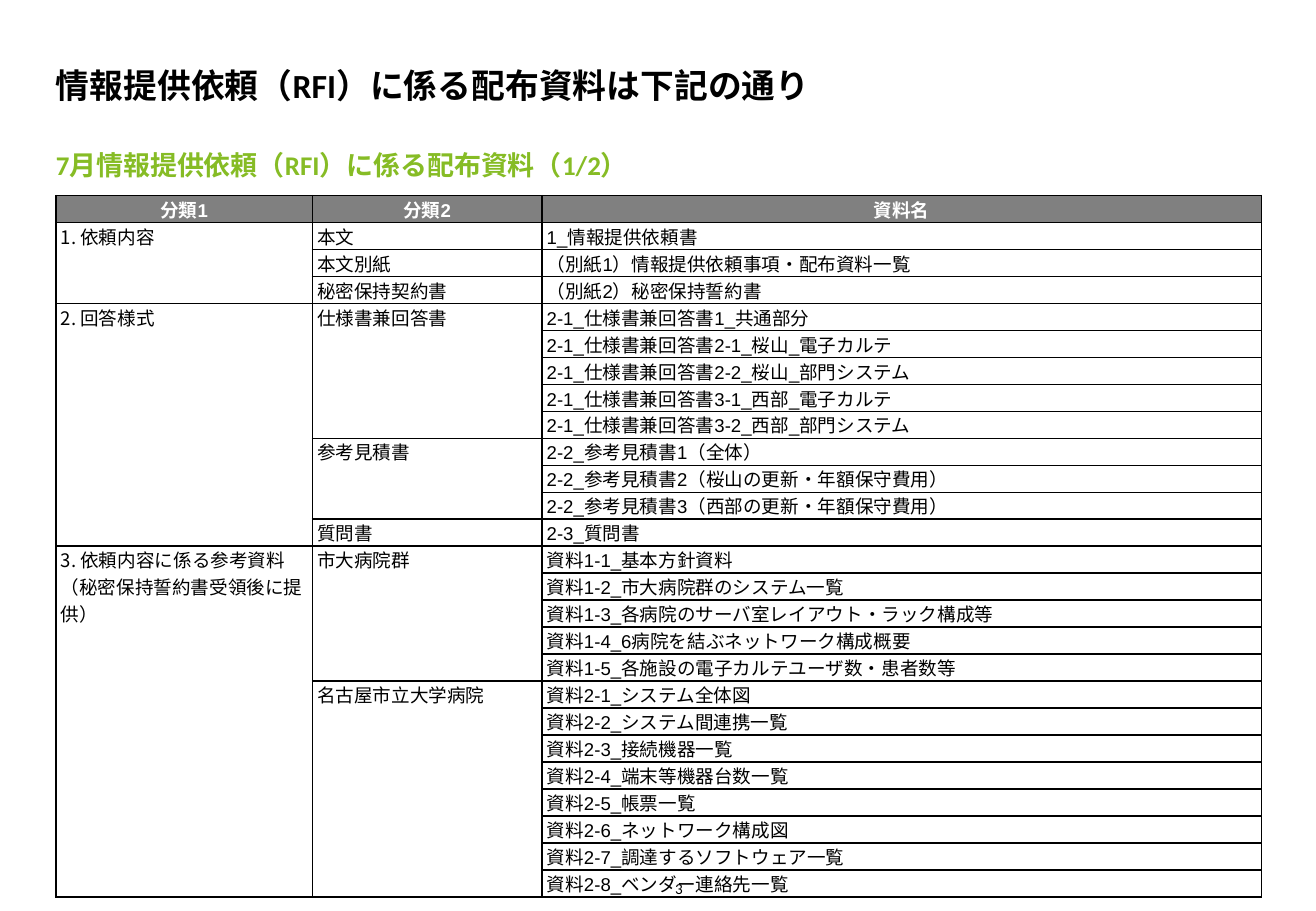
from lxml.etree import SubElement
from pptx import Presentation
from pptx.dml.color import RGBColor
from pptx.enum.text import MSO_ANCHOR as Anchor, MSO_AUTO_SIZE as AutoSize, PP_ALIGN as Align
from pptx.oxml.ns import qn
from pptx.util import Inches, Pt

BLACK = RGBColor(0, 0, 0)
WHITE = RGBColor(255, 255, 255)
GREEN = RGBColor(0x86, 0xBC, 0x25)
GRAY = RGBColor(0x80, 0x80, 0x80)
JAPANESE_FONT = "Noto Sans CJK JP"

LEFT, WIDTH = 0.46, 9.92
COLUMNS = (2.11, 1.89, 5.92)
ROW_HEIGHT = 0.21
HEADINGS = ("分類1", "分類2", "資料名")
DOCUMENTS = [
    ("1. 依頼内容", [
        ("本文", ["1_情報提供依頼書"]),
        ("本文別紙", ["（別紙1）情報提供依頼事項・配布資料一覧"]),
        ("秘密保持契約書", ["（別紙2）秘密保持誓約書"]),
    ]),
    ("2. 回答様式", [
        ("仕様書兼回答書", [
            "2-1_仕様書兼回答書1_共通部分",
            "2-1_仕様書兼回答書2-1_桜山_電子カルテ",
            "2-1_仕様書兼回答書2-2_桜山_部門システム",
            "2-1_仕様書兼回答書3-1_西部_電子カルテ",
            "2-1_仕様書兼回答書3-2_西部_部門システム",
        ]),
        ("参考見積書", [
            "2-2_参考見積書1（全体）",
            "2-2_参考見積書2（桜山の更新・年額保守費用）",
            "2-2_参考見積書3（西部の更新・年額保守費用）",
        ]),
        ("質問書", ["2-3_質問書"]),
    ]),
    ("3. 依頼内容に係る参考資料\n（秘密保持誓約書受領後に提供）", [
        ("市大病院群", [
            "資料1-1_基本方針資料",
            "資料1-2_市大病院群のシステム一覧",
            "資料1-3_各病院のサーバ室レイアウト・ラック構成等",
            "資料1-4_6病院を結ぶネットワーク構成概要",
            "資料1-5_各施設の電子カルテユーザ数・患者数等",
        ]),
        ("名古屋市立大学病院", [
            "資料2-1_システム全体図",
            "資料2-2_システム間連携一覧",
            "資料2-3_接続機器一覧",
            "資料2-4_端末等機器台数一覧",
            "資料2-5_帳票一覧",
            "資料2-6_ネットワーク構成図",
            "資料2-7_調達するソフトウェア一覧",
            "資料2-8_ベンダー連絡先一覧",
        ]),
    ]),
]


def write(frame, text, size, color=BLACK, bold=False, font="Calibri", align=Align.LEFT):
    frame.text = text
    for para in frame.paragraphs:
        para.alignment = align
        for span in para.runs:
            span.font.name = font
            span.font.size = Pt(size)
            span.font.bold = bold
            span.font.color.rgb = color
            east_asian = SubElement(span.font._element, qn("a:ea"))
            east_asian.set("typeface", JAPANESE_FONT)


def place_text(shape, box, anchor, wrap, text, size, **style):
    shape.left, shape.top, shape.width, shape.height = map(Inches, box)
    frame = shape.text_frame
    frame.margin_left = frame.margin_top = frame.margin_right = frame.margin_bottom = 0
    frame.vertical_anchor = anchor
    frame.word_wrap = wrap
    frame.auto_size = AutoSize.NONE
    write(frame, text, size, **style)


def frame_cell(cell):
    """Give a cell narrow margins, thin black borders and no fill."""
    cell.margin_left = cell.margin_right = Inches(0.04)
    cell.margin_top = cell.margin_bottom = 0
    properties = cell._tc.get_or_add_tcPr()
    for side in ("a:lnL", "a:lnR", "a:lnT", "a:lnB"):
        line = SubElement(properties, qn(side), w=str(Pt(1)))
        SubElement(SubElement(line, qn("a:solidFill")), qn("a:srgbClr"), val=str(BLACK))
    cell.fill.background()


def fill_group(table, row, column, count, text, font):
    """Write a label in a cell that covers count rows."""
    cell = table.cell(row, column)
    if count > 1:
        cell.merge(table.cell(row + count - 1, column))
    write(cell.text_frame, text, 11, font=font)


def add_document_table(page, left, top, width):
    row_count = 1 + sum(len(names) for _, groups in DOCUMENTS for _, names in groups)
    table = page.shapes.add_table(row_count, len(COLUMNS), Inches(left), Inches(top),
                                  Inches(width), Inches(ROW_HEIGHT * row_count)).table
    table.first_row = table.horz_banding = False
    for column, column_width in zip(table.columns, COLUMNS):
        column.width = Inches(column_width)
    for table_row in table.rows:
        table_row.height = Inches(ROW_HEIGHT)
    for cell in table.iter_cells():
        frame_cell(cell)

    for column, heading in enumerate(HEADINGS):
        cell = table.cell(0, column)
        cell.fill.solid()
        cell.fill.fore_color.rgb = GRAY
        cell.vertical_anchor = Anchor.MIDDLE
        write(cell.text_frame, heading, 11, WHITE, True, "Arial", Align.CENTER)

    row = 1
    for category, groups in DOCUMENTS:
        category_rows = sum(len(names) for _, names in groups)
        fill_group(table, row, 0, category_rows, category, JAPANESE_FONT)
        for group, names in groups:
            fill_group(table, row, 1, len(names), group, "Arial")
            for name in names:
                write(table.cell(row, 2).text_frame, name, 11, font="Arial")
                row += 1


def build_document_list(page):
    place_text(page.shapes.add_textbox(0, 0, 0, 0), (5.42, 7.2, 0.2, 0.19),
               Anchor.BOTTOM, False, "3", 9, align=Align.RIGHT)
    place_text(page.shapes.add_textbox(0, 0, 0, 0), (LEFT, 1.1, 4.76, 0.51),
               Anchor.MIDDLE, True, "7月情報提供依頼（RFI）に係る配布資料（1/2）", 16,
               color=GREEN, bold=True)
    place_text(page.shapes.title, (LEFT, 0.2, WIDTH, 0.67), Anchor.BOTTOM, True,
               "情報提供依頼（RFI）に係る配布資料は下記の通り", 20, bold=True)
    add_document_table(page, LEFT, 1.61, WIDTH)


def main():
    deck = Presentation()
    deck.slide_width, deck.slide_height = Inches(10.83), Inches(7.5)
    build_document_list(deck.slides.add_slide(deck.slide_layouts[5]))
    deck.save("out.pptx")


if __name__ == "__main__":
    main()
